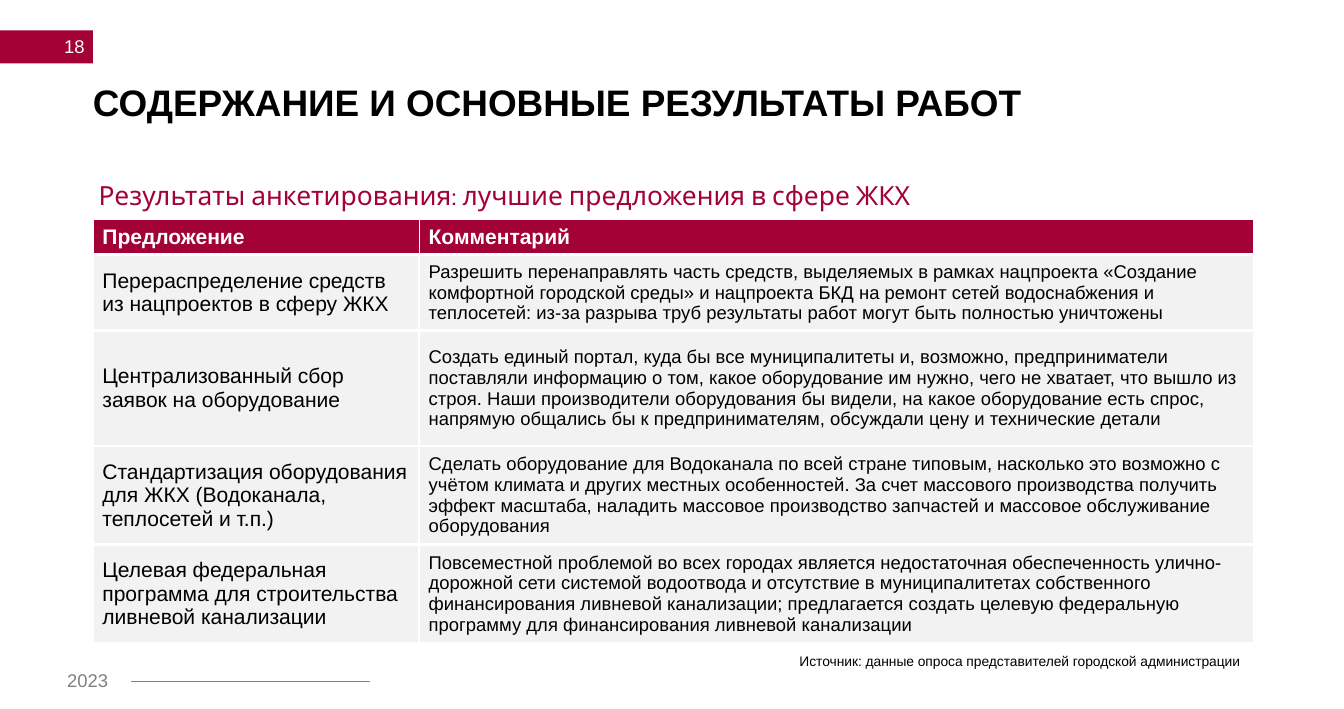
from dataclasses import dataclass

from lxml import etree
from pptx import Presentation
from pptx.dml.color import RGBColor
from pptx.enum.shapes import MSO_CONNECTOR, MSO_SHAPE
from pptx.enum.text import MSO_ANCHOR, PP_ALIGN
from pptx.oxml.ns import qn
from pptx.util import Inches, Pt

LEFT, RIGHT = PP_ALIGN.LEFT, PP_ALIGN.RIGHT
TOP, MIDDLE = MSO_ANCHOR.TOP, MSO_ANCHOR.MIDDLE
RECT, LINE = MSO_SHAPE.RECTANGLE, MSO_CONNECTOR.STRAIGHT


@dataclass(frozen=True)
class Theme:
    wine: str = "A30236"
    gray: str = "808080"
    pale: str = "F2F2F2"
    white: str = "FFFFFF"
    black: str = "000000"
    font: str = "Arial"
    accent: str = "Cabin"
    title: float = 28
    lead: float = 20
    head: float = 16
    body: float = 14
    note: float = 10.5


THEME = Theme()
COLS = [3.44, 8.8]
ROWS = [0.36, 0.8, 1.22, 1.04, 1.03]
EDGE, GAP, RULE = 1, 2.25, 3  # cell border widths in points

DATA = [
    ("Предложение", "Комментарий"),
    ("Перераспределение средств из нацпроектов в сферу ЖКХ",
     "Разрешить перенаправлять часть средств, выделяемых в рамках нацпроекта "
     "«Создание комфортной городской среды» и нацпроекта БКД на ремонт сетей "
     "водоснабжения и теплосетей: из-за разрыва труб результаты работ могут "
     "быть полностью уничтожены"),
    ("Централизованный сбор заявок на оборудование",
     "Создать единый портал, куда бы все муниципалитеты и, возможно, "
     "предприниматели поставляли информацию о том, какое оборудование им нужно, "
     "чего не хватает, что вышло из строя. Наши производители оборудования бы "
     "видели, на какое оборудование есть спрос, напрямую общались бы к "
     "предпринимателям, обсуждали цену и технические детали"),
    ("Стандартизация оборудования для ЖКХ (Водоканала, теплосетей и т.п.)",
     "Сделать оборудование для Водоканала по всей стране типовым, насколько это "
     "возможно с учётом климата и других местных особенностей. За счет массового "
     "производства получить эффект масштаба, наладить массовое производство "
     "запчастей и массовое обслуживание оборудования"),
    ("Целевая федеральная программа для строительства ливневой канализации",
     "Повсеместной проблемой во всех городах является недостаточная "
     "обеспеченность улично-дорожной сети системой водоотвода и отсутствие в "
     "муниципалитетах собственного финансирования ливневой канализации; "
     "предлагается создать целевую федеральную программу для финансирования "
     "ливневой канализации"),
]


def apply(item, values):
    for name, value in values.items():
        setattr(item, name, value)


def write(frame, text, size, color, font=THEME.font, bold=False, align=LEFT):
    frame.text = text
    para = frame.paragraphs[0]
    para.alignment = align
    apply(para.font, {"name": font, "size": Pt(size), "bold": bold})
    para.font.color.rgb = RGBColor.from_string(color)
    return para


def paint(fill, color):
    fill.solid()
    fill.fore_color.rgb = RGBColor.from_string(color)


def add_text(slide, box, text, size, color, anchor=TOP, **style):
    frame = slide.shapes.add_textbox(*map(Inches, box)).text_frame
    apply(frame, {"word_wrap": True, "vertical_anchor": anchor})
    write(frame, text, size, color, **style)


def add_title(slide, box, text):
    title = slide.shapes.title
    names = ("left", "top", "width", "height")
    apply(title, dict(zip(names, map(Inches, box))))
    sides = ("margin_left", "margin_top", "margin_right", "margin_bottom")
    apply(title.text_frame, dict.fromkeys(sides, 0))
    apply(title.text_frame, {"word_wrap": True, "vertical_anchor": MIDDLE})
    para = write(title.text_frame, text, THEME.title, THEME.black, bold=True)
    para.line_spacing = 0.9


def add_block(slide, box, color):
    block = slide.shapes.add_shape(RECT, *map(Inches, box))
    block.shadow.inherit = False
    paint(block.fill, color)
    block.line.fill.background()


def add_line(slide, ends, color, width):
    line = slide.shapes.add_connector(LINE, *map(Inches, ends))
    line.line.color.rgb = RGBColor.from_string(color)
    line.line.width = Pt(width)
    etree.SubElement(line._element.spPr, qn("a:effectLst"))


def add_edges(cell, widths):
    props = cell._tc.get_or_add_tcPr()
    for side, width in widths.items():
        edge = etree.SubElement(props, qn("a:ln" + side), w=str(Pt(width)))
        solid = etree.SubElement(edge, qn("a:solidFill"))
        etree.SubElement(solid, qn("a:srgbClr"), val=THEME.white)


def cell_edges(row, col):
    last = len(ROWS) - 1
    inner = GAP if row else EDGE
    return {
        "L": inner if col else EDGE,
        "R": EDGE if col else inner,
        "T": RULE if row == 1 else GAP if row else EDGE,
        "B": RULE if row == 0 else EDGE if row == last else GAP,
    }


def add_grid(slide, left, top):
    box = map(Inches, (left, top, sum(COLS), sum(ROWS)))
    grid = slide.shapes.add_table(len(ROWS), len(COLS), *box).table
    for col, width in zip(grid.columns, COLS):
        col.width = Inches(width)
    for row, height in zip(grid.rows, ROWS):
        row.height = Inches(height)
    for r, texts in enumerate(DATA):
        for c, text in enumerate(texts):
            cell = grid.cell(r, c)
            head = r == 0
            size = THEME.body if r and c else THEME.head
            color = THEME.white if head else THEME.black
            cell.vertical_anchor = MIDDLE
            write(cell.text_frame, text, size, color, bold=head)
            add_edges(cell, cell_edges(r, c))
            paint(cell.fill, THEME.wine if head else THEME.pale)


def main():
    deck = Presentation()
    apply(deck, {"slide_width": Inches(14.17), "slide_height": Inches(7.48)})
    slide = deck.slides.add_slide(deck.slide_layouts[5])

    # Page number
    add_block(slide, (0, 0.32, 0.98, 0.35), THEME.wine)
    add_text(slide, (0.18, 0.29, 0.81, 0.4), "18", THEME.body, THEME.white,
             anchor=MIDDLE, align=RIGHT)

    # Headings
    add_title(slide, (0.98, 0.91, 11.55, 0.39),
              "СОДЕРЖАНИЕ И ОСНОВНЫЕ РЕЗУЛЬТАТЫ РАБОТ")
    add_text(slide, (0.94, 1.84, 12.52, 0.44),
             "Результаты анкетирования: лучшие предложения в сфере ЖКХ",
             THEME.lead, THEME.wine, font=THEME.accent)

    # Proposals and their source
    add_grid(slide, 0.98, 2.32)
    add_text(slide, (7.26, 6.84, 5.92, 0.29),
             "Источник: данные опроса представителей городской администрации",
             THEME.note, THEME.black, align=RIGHT)

    # Footer
    add_text(slide, (0.61, 7.01, 0.67, 0.34), "2023", THEME.body, THEME.gray)
    add_line(slide, (1.38, 7.19, 3.9, 7.19), THEME.gray, 1.5)

    deck.save("out.pptx")


if __name__ == "__main__":
    main()
